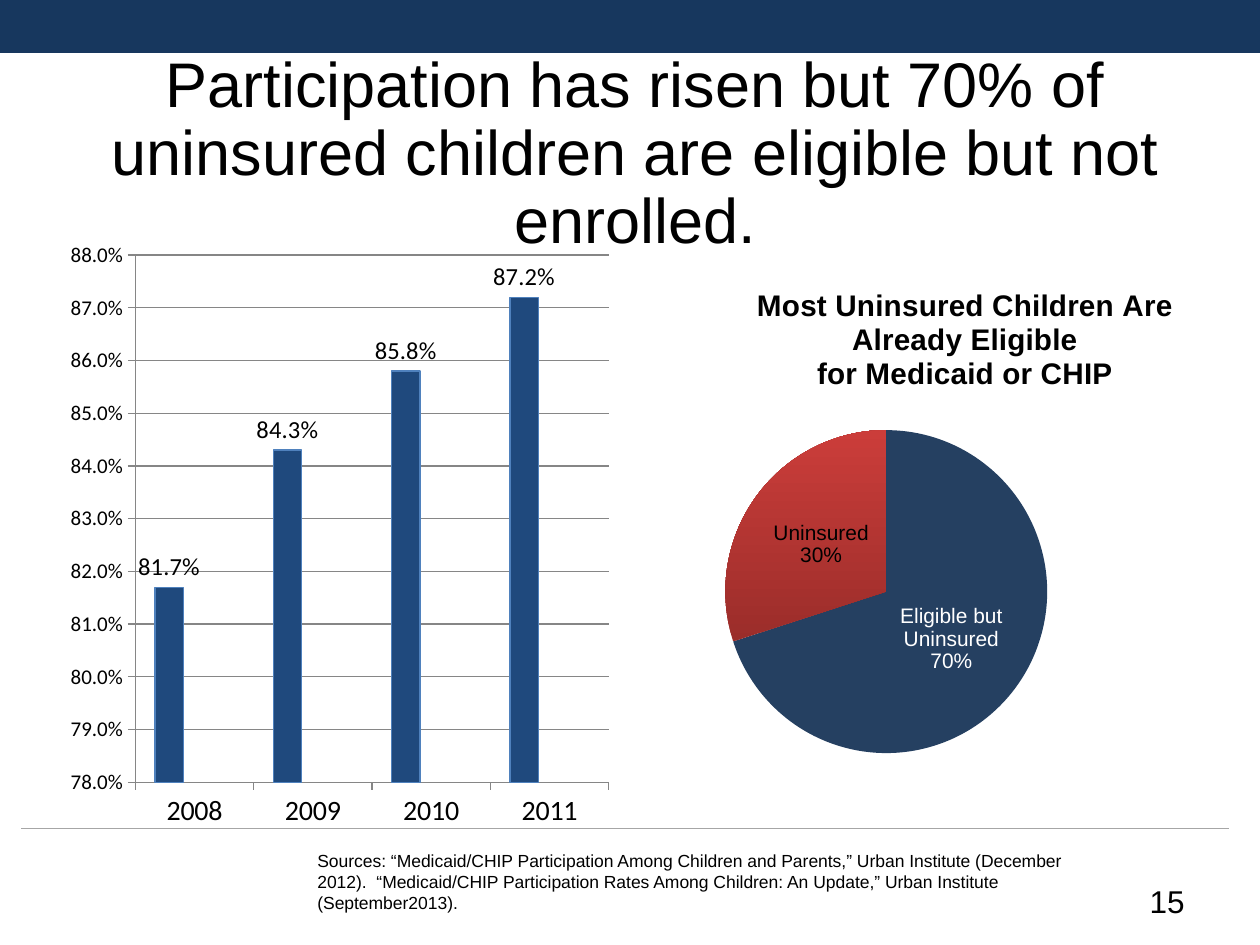
from lxml import etree
from pptx import Presentation
from pptx.chart.data import CategoryChartData
from pptx.dml.color import RGBColor
from pptx.enum.chart import XL_CHART_TYPE, XL_LABEL_POSITION, XL_TICK_MARK
from pptx.enum.shapes import MSO_CONNECTOR, MSO_SHAPE
from pptx.enum.text import MSO_ANCHOR, PP_ALIGN
from pptx.oxml.ns import qn
from pptx.util import Inches, Pt

COLUMN = XL_CHART_TYPE.COLUMN_CLUSTERED
PIE = XL_CHART_TYPE.PIE
ABOVE, MIDDLE = XL_LABEL_POSITION.OUTSIDE_END, XL_LABEL_POSITION.CENTER
TICK_OUT = XL_TICK_MARK.OUTSIDE
LEFT, CENTER, RIGHT = PP_ALIGN.LEFT, PP_ALIGN.CENTER, PP_ALIGN.RIGHT
TOP, CENTERED = MSO_ANCHOR.TOP, MSO_ANCHOR.MIDDLE

WIDTH, HEIGHT = Inches(10), Inches(7.5)
COLORS = {
    "banner": "17375E", "rule": "A6A6A6", "text": "000000", "light": "FFFFFF",
    "bar": "1F497D", "bar_edge": "4F81BD", "grid": "868686",
    "eligible": "254061", "uninsured_low": "9B2D2A", "uninsured_high": "CB3D3A",
}
BOXES = {
    "banner": (0, 0, 1, 0.056),
    "heading": (0.025, 0.089, 0.958, 0.151),
    "participation": (0.05, 0.244, 0.442, 0.649),
    "eligibility": (0.492, 0.268, 0.442, 0.623),
    "rule": (0.017, 0.877, 0.958, 0),
    "sources": (0.242, 0.893, 0.651, 0.033),
    "number": (0.717, 0.927, 0.233, 0.053),
}


def rgb(name):
    return RGBColor.from_string(COLORS[name])


def scale(box):
    left, top, width, height = box
    return (int(left * WIDTH), int(top * HEIGHT),
            int(width * WIDTH), int(height * HEIGHT))


def set_font(font, size, face="Arial", color="text", bold=False):
    font.name, font.size, font.bold = face, Pt(size), bold
    font.color.rgb = rgb(color)


def write(frame, text, align=LEFT, spacing=None, **font):
    for index, line in enumerate(text.split("\n")):
        paragraph = frame.paragraphs[0] if index == 0 else frame.add_paragraph()
        paragraph.alignment = align
        if spacing:
            paragraph.line_spacing = spacing
        run = paragraph.add_run()
        run.text = line
        set_font(run.font, **font)


def add_text(slide, box, text, anchor=TOP, **style):
    frame = slide.shapes.add_textbox(*scale(box)).text_frame
    frame.word_wrap = True
    frame.vertical_anchor = anchor
    write(frame, text, **style)


def set_layout(parent, index, **shares):
    for old in parent.findall(qn("c:layout")):
        parent.remove(old)
    layout = etree.Element(qn("c:layout"))
    manual = etree.SubElement(layout, qn("c:manualLayout"))
    if "w" in shares:
        etree.SubElement(manual, qn("c:layoutTarget")).set("val", "inner")
    for mode in ("xMode", "yMode"):
        etree.SubElement(manual, qn("c:" + mode)).set("val", "edge")
    for key, share in shares.items():
        etree.SubElement(manual, qn("c:" + key)).set("val", str(share))
    parent.insert(index, layout)


def add_chart(slide, box, kind, categories, series, **plot_box):
    data = CategoryChartData()
    data.categories = categories
    for name, values in series.items():
        data.add_series(name, values)
    chart = slide.shapes.add_chart(kind, *scale(box), data).chart
    chart.has_legend = False
    set_font(chart.font, 18, "Calibri")
    set_layout(chart._chartSpace.chart.plotArea, 0, **plot_box)
    return chart


def add_frame(slide, banner_box, rule_box):
    banner = slide.shapes.add_shape(MSO_SHAPE.RECTANGLE, *scale(banner_box))
    banner.shadow.inherit = False
    banner.fill.solid()
    banner.fill.fore_color.rgb = rgb("banner")
    banner.line.fill.background()
    left, top, width, height = scale(rule_box)
    rule = slide.shapes.add_connector(
        MSO_CONNECTOR.STRAIGHT, left, top, left + width, top + height)
    rule.line.color.rgb = rgb("rule")
    rule.line.width = Pt(0.75)
    etree.SubElement(rule._element.spPr, qn("a:effectLst"))


def add_participation(slide, box):
    years = ["2008", "2009", "2010", "2011"]
    series = {"Series 1": (0.817, 0.843, 0.858, 0.872),
              "Series 2": [None] * len(years), "Series 3": [None] * len(years)}
    chart = add_chart(slide, box, COLUMN, years, series,
                      x=0.13, y=0.04, w=0.85, h=0.86)
    chart.has_title = False
    plot = chart.plots[0]
    plot.vary_by_categories = False
    plot.gap_width, plot.overlap = 140, 10
    rates = plot.series[0]
    rates.format.fill.solid()
    rates.format.fill.fore_color.rgb = rgb("bar")
    rates.format.line.color.rgb = rgb("bar_edge")
    rates.format.line.width = Pt(0.75)
    labels = rates.data_labels
    labels.show_value = True
    labels.number_format, labels.number_format_is_linked = "0.0%", False
    labels.position = ABOVE
    set_font(labels.font, 14, "Calibri")

    scale_axis = chart.value_axis
    scale_axis.minimum_scale, scale_axis.maximum_scale = 0.78, 0.88
    scale_axis.major_unit = 0.01
    scale_axis.has_major_gridlines = True
    scale_axis.tick_labels.number_format = "0.0%"
    scale_axis.tick_labels.number_format_is_linked = False
    for axis, size in ((chart.category_axis, 16), (scale_axis, 12)):
        axis.major_tick_mark = TICK_OUT
        axis.format.line.color.rgb = rgb("grid")
        set_font(axis.tick_labels.font, size, "Calibri")
    scale_axis.major_gridlines.format.line.color.rgb = rgb("grid")


def add_eligibility(slide, box):
    groups = ["Eligible but Uninsured", "Uninsured"]
    shares = (70, 30)
    chart = add_chart(slide, box, PIE, groups, {"Series 1": shares},
                      x=0.19, y=0.29, w=0.58, h=0.57)
    chart.has_title = True
    write(chart.chart_title.text_frame,
          "Most Uninsured Children Are Already Eligible\nfor Medicaid or CHIP",
          align=CENTER, size=17, bold=True)
    set_layout(chart.chart_title._element, 1, x=0.24, y=0.05)
    plot = chart.plots[0]
    plot.vary_by_categories = True
    points = plot.series[0].points
    eligible, uninsured = points[0].format.fill, points[1].format.fill
    eligible.solid()
    eligible.fore_color.rgb = rgb("eligible")
    uninsured.gradient()
    uninsured.gradient_angle = 90
    for stop, color in zip(uninsured.gradient_stops,
                           ("uninsured_low", "uninsured_high")):
        stop.color.rgb = rgb(color)
    for index, color in enumerate(("light", "text")):
        label = points[index].data_label
        write(label.text_frame, f"{groups[index]}\n{shares[index]}%",
              align=CENTER, size=12, color=color)
        label.position = MIDDLE


def main():
    deck = Presentation()
    deck.slide_width, deck.slide_height = WIDTH, HEIGHT
    slide = deck.slides.add_slide(deck.slide_layouts[6])
    add_frame(slide, BOXES["banner"], BOXES["rule"])
    add_text(slide, BOXES["heading"],
             "Participation has risen but 70% of uninsured children "
             "are eligible but not enrolled.",
             anchor=CENTERED, align=CENTER, spacing=0.9, size=36)
    add_participation(slide, BOXES["participation"])
    add_eligibility(slide, BOXES["eligibility"])
    add_text(slide, BOXES["sources"],
             "Sources: “Medicaid/CHIP Participation Among Children and Parents,” "
             "Urban Institute (December 2012).  “Medicaid/CHIP Participation Rates "
             "Among Children: An Update,” Urban Institute (September2013).", size=10)
    add_text(slide, BOXES["number"], "15", align=RIGHT, size=18)
    deck.save("out.pptx")


if __name__ == "__main__":
    main()
